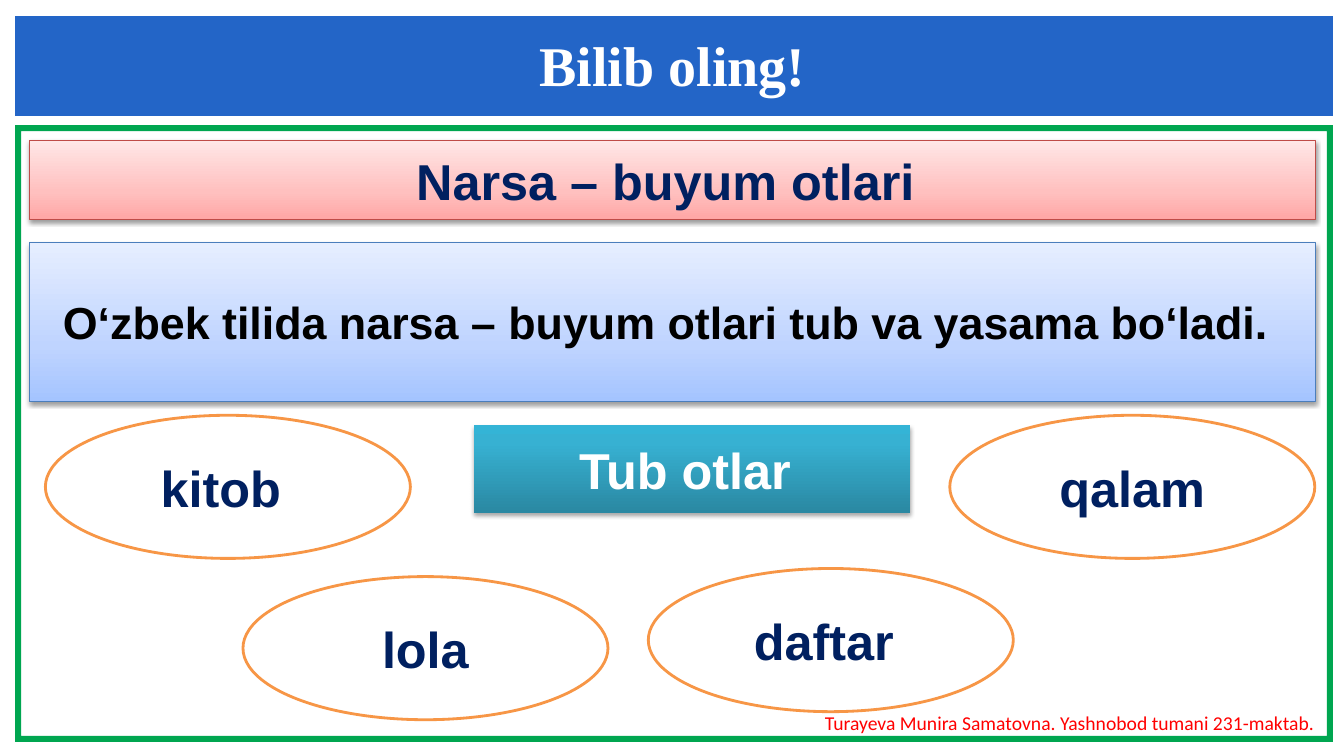
from copy import deepcopy
from dataclasses import dataclass

from lxml import etree
from pptx import Presentation
from pptx.dml.color import RGBColor
from pptx.enum.shapes import MSO_SHAPE
from pptx.enum.text import MSO_ANCHOR, MSO_AUTO_SIZE, PP_ALIGN
from pptx.oxml.ns import qn
from pptx.util import Inches, Pt

RECT, OVAL, FRAME = MSO_SHAPE.RECTANGLE, MSO_SHAPE.OVAL, MSO_SHAPE.FRAME
TOP, MIDDLE = MSO_ANCHOR.TOP, MSO_ANCHOR.MIDDLE
CENTER = PP_ALIGN.CENTER
NO_FIT = MSO_AUTO_SIZE.NONE

TITLE = "Bilib oling!"
CREDIT = "Turayeva Munira Samatovna. Yashnobod tumani 231-maktab."
PANELS = [
    ("Narsa – buyum otlari ", (0.29, 1.39, 12.76, 0.79), "rose"),
    ("O‘zbek tilida narsa – buyum otlari tub va yasama bo‘ladi. ",
     (0.29, 2.41, 12.76, 1.57), "sky"),
    ("Tub otlar ", (4.7, 4.22, 4.33, 0.87), "teal"),
]
WORDS = [
    ("kitob ", 0.45, 4.12),
    ("lola", 2.41, 5.72),
    ("qalam", 9.42, 4.12),
    ("daftar ", 6.43, 5.64),
]
OVAL_SIZE = (3.62, 1.42)
BAND = (0.15, 0.16, 13.07, 0.99)
BORDER = (0.15, 1.24, 13.07, 6.12)
EDGE = 0.06


@dataclass
class Theme:
    white: str = "FFFFFF"
    navy: str = "002060"
    black: str = "000000"
    red: str = "FF0000"
    blue: str = "2365C7"
    green: str = "00A650"
    orange: str = "F79646"
    head: str = "Times New Roman"
    body: str = "Arial"
    note: str = "Calibri"
    head_size: int = 40
    big: int = 36
    mid: int = 32
    small: int = 14


theme = Theme()
STYLES = {
    "rose": dict(stops=[(0, "FFA6A5"), (0.35, "FFC0BF"), (1, "FFE7E7")],
                 line="BF4C48", ink=theme.navy, size=theme.big, shade=(38, 1.6)),
    "sky": dict(stops=[(0, "A4C4FF"), (0.35, "BFD4FF"), (1, "E6EEFF")],
                line="4B7EBC", ink=theme.black, size=theme.mid, shade=(38, 1.6)),
    "teal": dict(stops=[(0, "2A88A2"), (0.8, "37B1D2"), (1, "34B4D6")],
                 line=None, ink=theme.white, size=theme.big, shade=(35, 1.8)),
}


def rgb(code):
    return RGBColor.from_string(code)


def write(shape, text, font, size, ink, bold=True, anchor=MIDDLE, inset=True):
    frame = shape.text_frame
    frame.word_wrap = True
    frame.auto_size = NO_FIT
    frame.vertical_anchor = anchor
    if not inset:
        frame.margin_left = frame.margin_right = 0
        frame.margin_top = frame.margin_bottom = 0
    para = frame.paragraphs[0]
    para.text = text
    para.alignment = CENTER
    para.font.name = font
    para.font.size = Pt(size)
    para.font.bold = bold
    para.font.color.rgb = rgb(ink)


def draw(slide, kind, box, fill=None, line=None, width=0.75):
    shape = slide.shapes.add_shape(kind, *map(Inches, box))
    if fill:
        shape.fill.solid()
        shape.fill.fore_color.rgb = rgb(fill)
    if line:
        shape.line.color.rgb = rgb(line)
        shape.line.width = Pt(width)
    else:
        shape.line.fill.background()
    shape.shadow.inherit = False
    return shape


def blend(shape, stops):
    shape.fill.gradient()
    shape.fill.gradient_angle = 90
    nodes = shape._element.spPr.find(".//" + qn("a:gsLst"))
    nodes.insert(1, deepcopy(nodes[0]))
    for stop, (place, code) in zip(shape.fill.gradient_stops, stops):
        stop.position = place
        stop.color.rgb = rgb(code)


def shade(shape, alpha, drop):
    effects = shape._element.spPr.find(qn("a:effectLst"))
    outer = etree.SubElement(
        effects, qn("a:outerShdw"), blurRad=str(Pt(3.1)), dist=str(Pt(drop)),
        dir="5400000", rotWithShape="0")
    color = etree.SubElement(outer, qn("a:srgbClr"), val=theme.black)
    etree.SubElement(color, qn("a:alpha"), val=str(alpha * 1000))


def main():
    deck = Presentation()
    deck.slide_width, deck.slide_height = Inches(13.33), Inches(7.5)
    slide = deck.slides.add_slide(deck.slide_layouts[5])

    border = draw(slide, FRAME, BORDER, theme.green)
    border.adjustments[0] = EDGE / BORDER[3]
    draw(slide, RECT, BAND, theme.blue)

    title = slide.shapes.title
    title.left, title.top, title.width, title.height = map(
        Inches, (1.67, 0.3, 10, 0.67))
    write(title, TITLE, theme.head, theme.head_size, theme.white,
          anchor=TOP, inset=False)
    slide.shapes._spTree.append(title._element)

    for text, box, name in PANELS:
        style = STYLES[name]
        panel = draw(slide, RECT, box, line=style["line"])
        blend(panel, style["stops"])
        shade(panel, *style["shade"])
        write(panel, text, theme.body, style["size"], style["ink"])

    for text, left, top in WORDS:
        oval = draw(slide, OVAL, (left, top, *OVAL_SIZE), theme.white,
                    theme.orange, 2)
        write(oval, text, theme.body, theme.big, theme.navy)

    credit = slide.shapes.add_textbox(*map(Inches, (8.01, 7.05, 5.2, 0.24)))
    write(credit, CREDIT, theme.note, theme.small, theme.red, bold=False,
          anchor=TOP, inset=False)

    deck.save("out.pptx")


if __name__ == "__main__":
    main()
